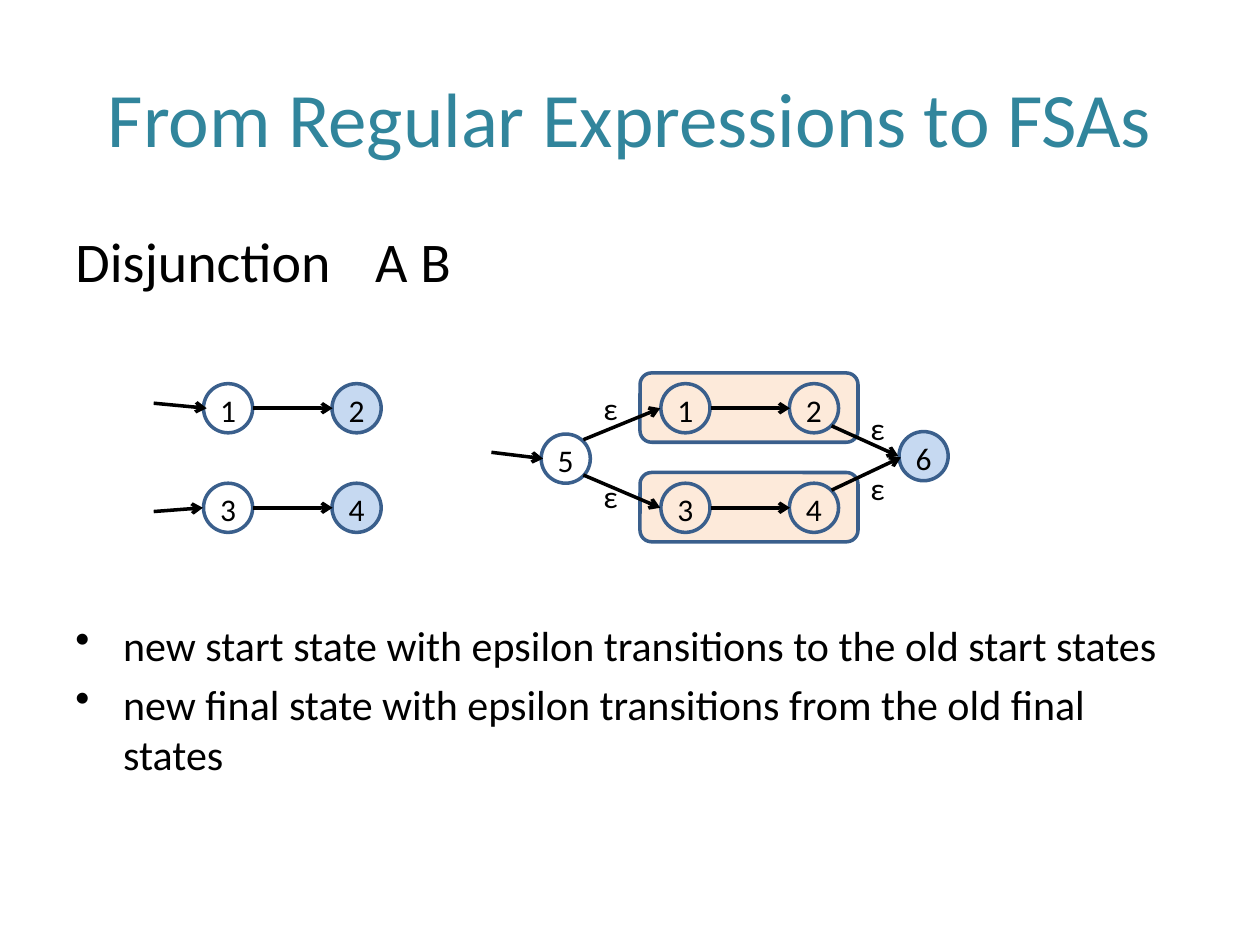
"""Build a slide on the disjunction of two finite state automata."""
import pptx
import pptx.util
import pptx.dml.color
import pptx.enum.shapes
import pptx.enum.text
import pptx.oxml
import pptx.oxml.ns

Inches = pptx.util.Inches
Pt = pptx.util.Pt
Shape = pptx.enum.shapes.MSO_SHAPE
Align = pptx.enum.text.PP_ALIGN
Anchor = pptx.enum.text.MSO_ANCHOR

COLORS = {
    "title": "31859C",
    "text": "000000",
    "edge": "3A5F8C",
    "final": "C6D9F1",
    "box": "FDEADA",
}
SIZE = 0.39
TOP, LOW = 3.24, 4.03
MID = 3.64
ROWS = ((TOP, "1", "2"), (LOW, "3", "4"))


def shade(name):
    return pptx.dml.color.RGBColor.from_string(COLORS[name])


def apply(target, values):
    for key, value in values.items():
        setattr(target, key, value)


def write(par, text, size, color="text"):
    run = par.add_run()
    run.text = text
    apply(run.font, {"name": "Calibri", "size": Pt(size)})
    run.font.color.rgb = shade(color)


def add_text(slide, spot, text, size, color="text", wrap=True, **align):
    box = slide.shapes.add_textbox(*map(Inches, spot))
    frame = box.text_frame
    apply(frame, {"word_wrap": wrap, "vertical_anchor": Anchor.TOP})
    apply(frame.paragraphs[0], align)
    write(frame.paragraphs[0], text, size, color)
    return frame


def add_shape(slide, kind, spot, fill=None):
    shape = slide.shapes.add_shape(kind, *map(Inches, spot))
    shape.shadow.inherit = False
    if fill:
        shape.fill.solid()
        shape.fill.fore_color.rgb = shade(fill)
    else:
        shape.fill.background()
    shape.line.color.rgb = shade("edge")
    shape.line.width = Pt(2)
    return shape


def add_state(slide, label, x, y, fill=None):
    spot = (x - SIZE / 2, y - SIZE / 2, SIZE, SIZE)
    frame = add_shape(slide, Shape.OVAL, spot, fill).text_frame
    apply(frame, {
        "word_wrap": False,
        "vertical_anchor": Anchor.MIDDLE,
        "margin_left": 0,
        "margin_right": 0,
        "margin_top": Inches(0.02),
        "margin_bottom": 0,
    })
    frame.paragraphs[0].alignment = Align.CENTER
    write(frame.paragraphs[0], label, 18)


def add_arrow(slide, *ends):
    kind = pptx.enum.shapes.MSO_CONNECTOR.STRAIGHT
    arrow = slide.shapes.add_connector(kind, *map(Inches, ends))
    arrow.line.color.rgb = shade("text")
    arrow.line.width = Pt(2)
    tip = pptx.oxml.parse_xml(
        f'<a:tailEnd {pptx.oxml.ns.nsdecls("a")} type="arrow"/>')
    arrow.line._get_or_add_ln().append(tip)
    flat = f'<a:effectLst {pptx.oxml.ns.nsdecls("a")}/>'
    arrow._element.spPr.append(pptx.oxml.parse_xml(flat))


def add_point(frame, text, before):
    par = frame.add_paragraph()
    par.space_before = Pt(before)
    write(par, text, 24)
    mark = f'<a:buChar {pptx.oxml.ns.nsdecls("a")} char="•"/>'
    par._p.get_or_add_pPr().append(pptx.oxml.parse_xml(mark))


def add_body(slide):
    frame = add_text(slide, (0.5, 1.75, 9, 4.95), "Disjunction\tA B", 32)
    add_point(frame, "new start state with epsilon transitions "
                     "to the old start states", 186)
    add_point(frame, "new final state with epsilon transitions "
                     "from the old final states", 4.8)
    for par in frame.paragraphs:
        for key, value in (("marL", 0.38), ("indent", -0.38)):
            par._p.get_or_add_pPr().set(key, str(Inches(value)))


def add_row(slide, x, y, first, last, fill=None):
    add_state(slide, first, x, y)
    add_state(slide, last, x + 1.02, y, fill)
    add_arrow(slide, x + 0.2, y, x + 0.83, y)


def add_graphs(slide):
    for y, first, last in ROWS:
        box = (5.08, y - 0.28, 1.73, 0.55)
        add_shape(slide, Shape.ROUNDED_RECTANGLE, box, "box")
        add_row(slide, 1.81, y, first, last, "final")
        add_row(slide, 5.44, y, first, last)
    add_state(slide, "5", 4.49, MID)
    add_state(slide, "6", 7.33, 3.62, "final")
    for ends in (
        (1.22, 3.2, 1.64, TOP),
        (1.22, 4.06, 1.61, LOW),
        (3.9, 3.59, 4.31, MID),
        (4.63, 3.49, 5.24, TOP),
        (4.63, 3.77, 5.24, LOW),
        (6.6, 3.38, 7.13, 3.62),
        (6.6, 3.89, 7.15, 3.63),
    ):
        add_arrow(slide, *ends)
    for x, y in ((4.69, 3.04), (4.69, 3.74), (6.81, 3.2), (6.81, 3.67)):
        add_text(slide, (x, y, 0.32, 0.4), "ε", 18, wrap=False)


def main():
    deck = pptx.Presentation()
    apply(deck, {"slide_width": Inches(10), "slide_height": Inches(7.5)})
    slide = deck.slides.add_slide(deck.slide_layouts[6])
    title = add_text(slide, (0.5, 0.3, 9, 1.25),
                     "From Regular Expressions to FSAs", 44, "title",
                     alignment=Align.CENTER)
    title.vertical_anchor = Anchor.MIDDLE
    add_body(slide)
    add_graphs(slide)
    deck.save("out.pptx")


if __name__ == "__main__":
    main()
